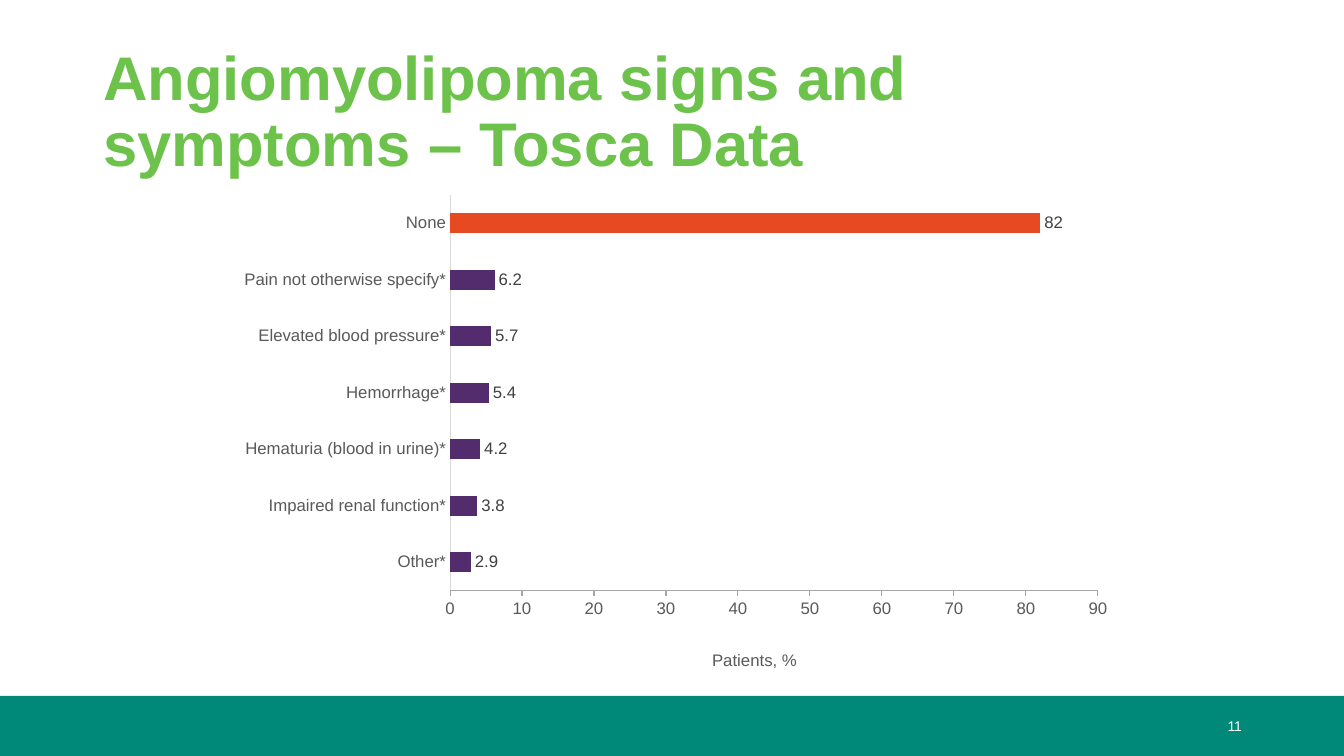
import pptx
import pptx.chart.data
import pptx.dml.color
import pptx.enum.chart
import pptx.enum.shapes
import pptx.enum.text
import pptx.oxml
import pptx.oxml.ns
import pptx.util

PX = 9071.43  # EMU in one px
COLORS = {
    "green": "6CC24A", "teal": "008878", "white": "FFFFFF",
    "purple": "522C6D", "orange": "E74A21",
    "axis_text": "595959", "label_text": "404040",
    "cat_line": "D9D9D9", "val_line": "A6A6A6",
}
SYMPTOMS = {
    "Other*": 2.9,
    "Impaired renal function*": 3.8,
    "Hematuria (blood in urine)*": 4.2,
    "Hemorrhage*": 5.4,
    "Elevated blood pressure*": 5.7,
    "Pain not otherwise specify*": 6.2,
    "None": 82,
}
CHART = (227, 184, 899, 491)
PLOT = (450, 195, 648, 398)
AXIS_TITLE = (709, 650)


def color(name):
    return pptx.dml.color.RGBColor.from_string(COLORS[name])


def set_layout(parent, left, top, size=()):
    """Place a chart part by hand, from px on the slide."""
    x, y, w, h = CHART
    values = {"x": (left - x) / w, "y": (top - y) / h}
    target = ""
    if size:
        target = '<c:layoutTarget val="inner"/>'
        values.update(w=size[0] / w, h=size[1] / h)
    modes = "".join(f'<c:{k}Mode val="edge"/>' for k in "xy")
    numbers = "".join(f'<c:{k} val="{v:.4f}"/>' for k, v in values.items())
    layout = pptx.oxml.parse_xml(
        f'<c:layout {pptx.oxml.ns.nsdecls("c")}><c:manualLayout>'
        f"{target}{modes}{numbers}</c:manualLayout></c:layout>")
    for old in parent.findall(pptx.oxml.ns.qn("c:layout")):
        parent.remove(old)
    text = parent.find(pptx.oxml.ns.qn("c:tx"))
    if text is None:
        parent.insert(0, layout)
    else:
        text.addnext(layout)


prs = pptx.Presentation()
prs.slide_width = round(1344 * PX)
prs.slide_height = round(756 * PX)
s = prs.slides.add_slide(prs.slide_layouts[5])

# Footer band
band = s.shapes.add_shape(
    pptx.enum.shapes.MSO_SHAPE.RECTANGLE,
    *[round(v * PX) for v in (0, 696, 1344, 60)])
band.shadow.inherit = False
band.fill.solid()
band.fill.fore_color.rgb = color("teal")
band.line.fill.background()

# Title and slide number
title = s.shapes.title
number = s.shapes.add_textbox(0, 0, 0, 0)
align = pptx.enum.text.PP_ALIGN
anchor = pptx.enum.text.MSO_ANCHOR
for sp, text, box, para, valign, size, bold, ink in (
    (title, "Angiomyolipoma signs and symptoms – Tosca Data",
     (93, 44, 992, 141), {"alignment": align.LEFT, "line_spacing": 0.9},
     anchor.BOTTOM, 44, True, "green"),
    (number, "11", (950, 696, 302, 60), {"alignment": align.RIGHT},
     anchor.MIDDLE, 10, False, "white"),
):
    for name, v in zip(("left", "top", "width", "height"), box):
        setattr(sp, name, round(v * PX))
    tf = sp.text_frame
    tf.word_wrap = True
    tf.auto_size = pptx.enum.text.MSO_AUTO_SIZE.NONE
    tf.vertical_anchor = valign
    p = tf.paragraphs[0]
    for name, v in para.items():
        setattr(p, name, v)
    r = p.add_run()
    r.text = text
    font = {"name": "Arial", "size": pptx.util.Pt(size), "bold": bold}
    for name, v in font.items():
        setattr(r.font, name, v)
    r.font.color.rgb = color(ink)

# Bar chart
data = pptx.chart.data.CategoryChartData()
data.categories = list(SYMPTOMS)
data.add_series("Series 1", list(SYMPTOMS.values()))
chart = s.shapes.add_chart(
    pptx.enum.chart.XL_CHART_TYPE.BAR_CLUSTERED,
    *[round(v * PX) for v in CHART], data).chart
chart.has_legend = False
chart.has_title = False
plot = chart.plots[0]
plot.gap_width = 182
plot.vary_by_categories = False
series = plot.series[0]
none_bar = series.points[len(SYMPTOMS) - 1]
for bar, fill in ((series, "purple"), (none_bar, "orange")):
    bar.format.fill.solid()
    bar.format.fill.fore_color.rgb = color(fill)

labels = series.data_labels
labels.show_value = True
labels.position = pptx.enum.chart.XL_LABEL_POSITION.OUTSIDE_END

ticks = pptx.enum.chart.XL_TICK_MARK
cat_axis, val_axis = chart.category_axis, chart.value_axis
for axis, line, tick in ((cat_axis, "cat_line", ticks.NONE),
                         (val_axis, "val_line", ticks.OUTSIDE)):
    axis.has_major_gridlines = False
    axis.major_tick_mark = tick
    axis.minor_tick_mark = ticks.NONE
    axis.format.line.color.rgb = color(line)
    axis.format.line.width = pptx.util.Pt(0.75)
for name, v in {"minimum_scale": 0, "maximum_scale": 90,
                "major_unit": 10}.items():
    setattr(val_axis, name, v)

axis_title = val_axis.axis_title
p = axis_title.text_frame.paragraphs[0]
r = p.add_run()
r.text = "Patients, %"
for font, ink in ((chart.font, "axis_text"), (labels.font, "label_text"),
                  (cat_axis.tick_labels.font, "axis_text"),
                  (val_axis.tick_labels.font, "axis_text"),
                  (r.font, "axis_text")):
    for name, v in {"name": "Arial", "size": pptx.util.Pt(12),
                    "bold": False}.items():
        setattr(font, name, v)
    font.color.rgb = color(ink)

set_layout(chart.element.chart.plotArea, *PLOT[:2], PLOT[2:])
set_layout(axis_title.element, *AXIS_TITLE)

prs.save("out.pptx")
